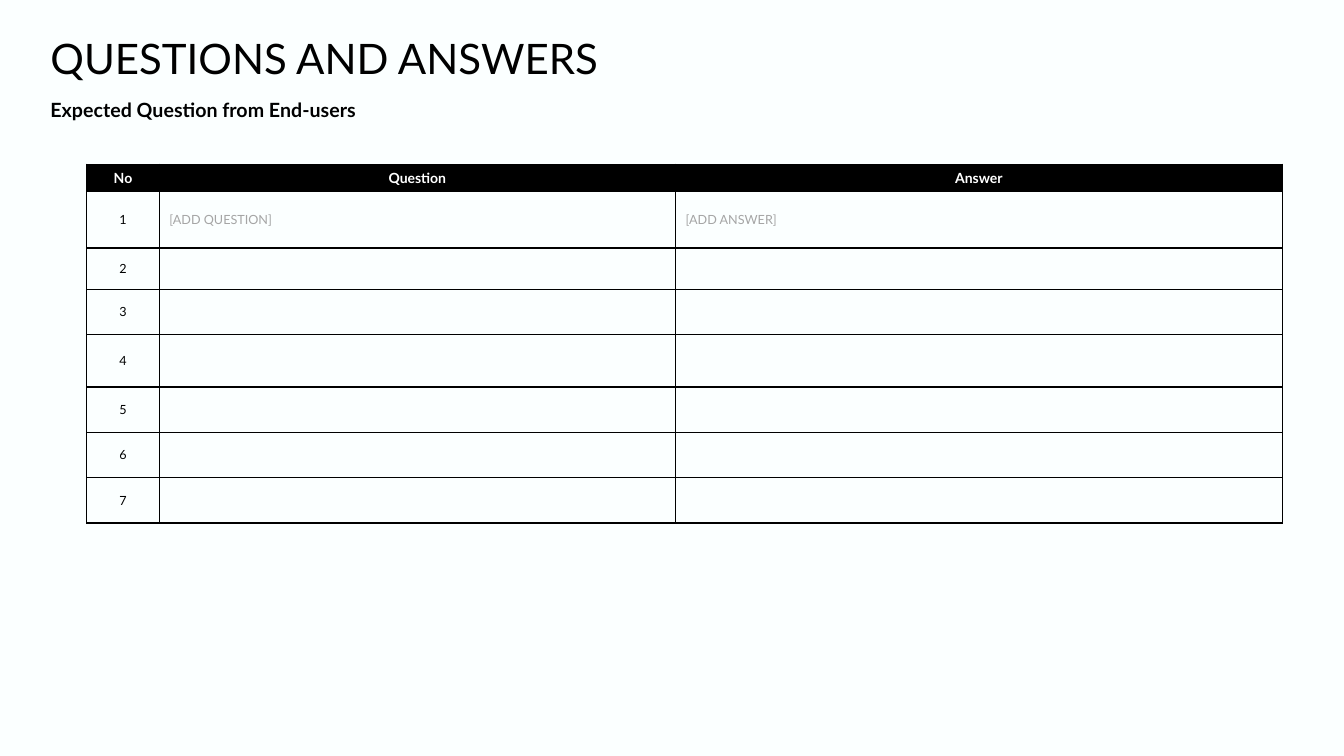
from lxml.etree import SubElement
from pptx import Presentation
from pptx.dml.color import RGBColor
from pptx.enum.text import MSO_ANCHOR, MSO_AUTO_SIZE, PP_ALIGN
from pptx.oxml.ns import qn
from pptx.util import Inches, Pt

BLACK = RGBColor(0x00, 0x00, 0x00)
WHITE = RGBColor(0xFF, 0xFF, 0xFF)
GRAY = RGBColor(0xA5, 0xA5, 0xA5)
BACKGROUND = RGBColor(0xFB, 0xFF, 0xFF)
FONT = "Lato"

LEFT_MARGIN = 0.5
COLUMN_WIDTHS = [0.72, 5.12, 6.02]
ROW_HEIGHTS = [0.27, 0.56, 0.41, 0.45, 0.52, 0.45, 0.45, 0.45]
HEADERS = ["No", "Question", "Answer"]
PROMPTS = ["[ADD QUESTION]", "[ADD ANSWER]"]


def format_paragraph(paragraph, size, color, bold=False, alignment=PP_ALIGN.LEFT):
    paragraph.alignment = alignment
    font = paragraph.font
    font.name = FONT
    font.size = Pt(size)
    font.bold = bold
    font.color.rgb = color


def fill_text_box(shape, text, size, margins, line_spacing, bold=False):
    """Write one top-anchored line; margins are left, top, right, bottom."""
    frame = shape.text_frame
    frame.text = text
    frame.word_wrap = True
    frame.auto_size = MSO_AUTO_SIZE.NONE
    frame.vertical_anchor = MSO_ANCHOR.TOP
    (frame.margin_left, frame.margin_top,
     frame.margin_right, frame.margin_bottom) = map(Inches, margins)
    paragraph = frame.paragraphs[0]
    paragraph.line_spacing = line_spacing
    format_paragraph(paragraph, size, BLACK, bold)


def add_title(slide):
    title = slide.shapes.title
    title.left, title.top = Inches(LEFT_MARGIN), Inches(0.42)
    title.width, title.height = Inches(12.44), Inches(0.45)
    fill_text_box(title, "QUESTIONS AND ANSWERS", 30, (0, 0, 0, 0), 0.8)


def add_subtitle(slide):
    subtitle = slide.shapes.add_textbox(
        Inches(LEFT_MARGIN), Inches(0.88), Inches(12.58), Inches(0.36))
    fill_text_box(subtitle, "Expected Question from End-users", 14,
                  (0, 0.05, 0.1, 0.05), 1.2, bold=True)


def add_borders(cell):
    properties = cell._tc.get_or_add_tcPr()
    for side in ("lnL", "lnR", "lnT", "lnB"):
        line = SubElement(properties, qn(f"a:{side}"), w=str(Pt(1)))
        fill = SubElement(line, qn("a:solidFill"))
        SubElement(fill, qn("a:srgbClr"), val=str(BLACK))


def format_cell(cell, text, row, column):
    add_borders(cell)
    cell.text = text
    paragraph = cell.text_frame.paragraphs[0]
    if row == 0:
        cell.fill.solid()
        cell.fill.fore_color.rgb = BLACK
        format_paragraph(paragraph, 10, WHITE, True, PP_ALIGN.CENTER)
        return
    cell.fill.background()
    cell.vertical_anchor = MSO_ANCHOR.MIDDLE
    if column == 0:
        format_paragraph(paragraph, 9, BLACK, alignment=PP_ALIGN.CENTER)
    else:
        format_paragraph(paragraph, 9, GRAY)


def add_question_table(slide):
    numbers = range(1, len(ROW_HEIGHTS))
    contents = [HEADERS] + [
        [str(number)] + (PROMPTS if number == 1 else ["", ""]) for number in numbers]
    table = slide.shapes.add_table(
        len(ROW_HEIGHTS), len(COLUMN_WIDTHS), Inches(0.86), Inches(1.63),
        Inches(sum(COLUMN_WIDTHS)), Inches(sum(ROW_HEIGHTS))).table
    table.first_row = False
    table.horz_banding = False
    for column, width in zip(table.columns, COLUMN_WIDTHS):
        column.width = Inches(width)
    for row, height in zip(table.rows, ROW_HEIGHTS):
        row.height = Inches(height)
    for row, texts in enumerate(contents):
        for column, text in enumerate(texts):
            format_cell(table.cell(row, column), text, row, column)


def main():
    presentation = Presentation()
    presentation.slide_width = Inches(13.33)
    presentation.slide_height = Inches(7.5)
    title_only = presentation.slide_layouts.get_by_name("Title Only")
    slide = presentation.slides.add_slide(title_only)
    slide.background.fill.solid()
    slide.background.fill.fore_color.rgb = BACKGROUND
    add_title(slide)
    add_subtitle(slide)
    add_question_table(slide)
    presentation.save("out.pptx")


if __name__ == "__main__":
    main()
